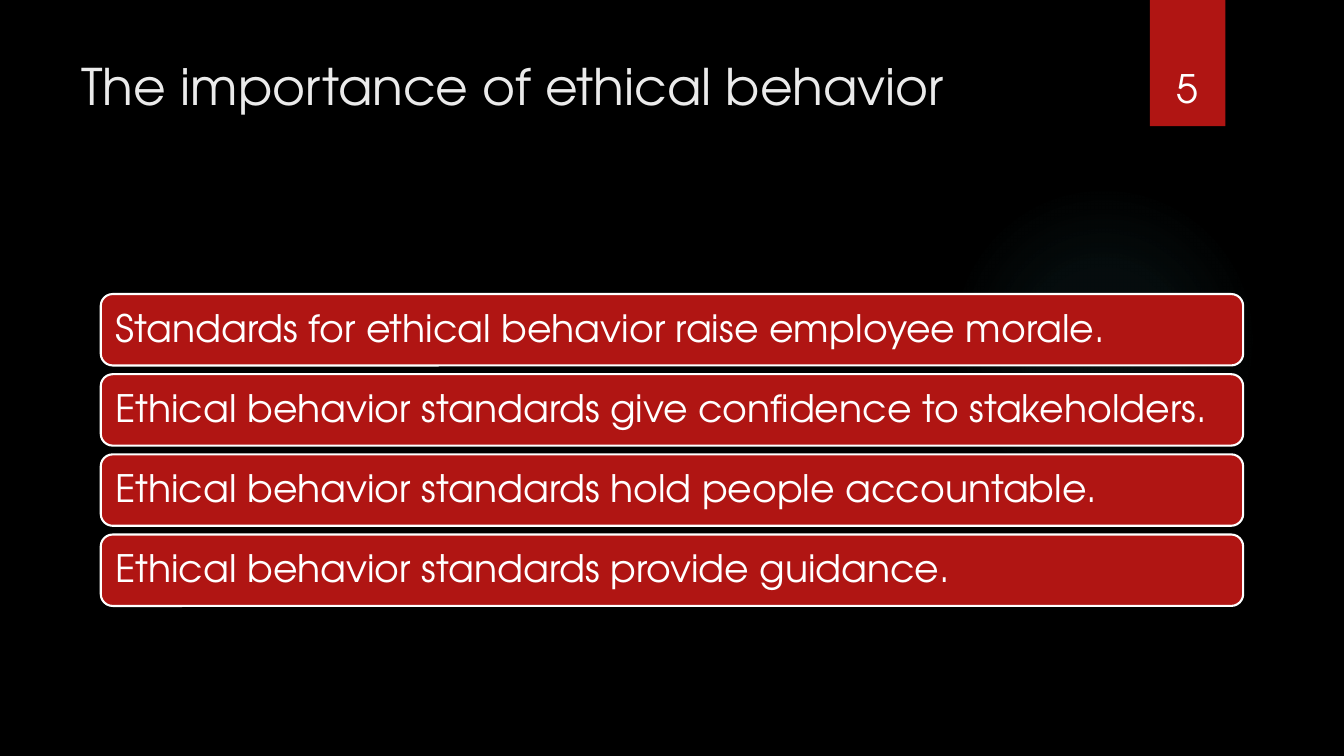
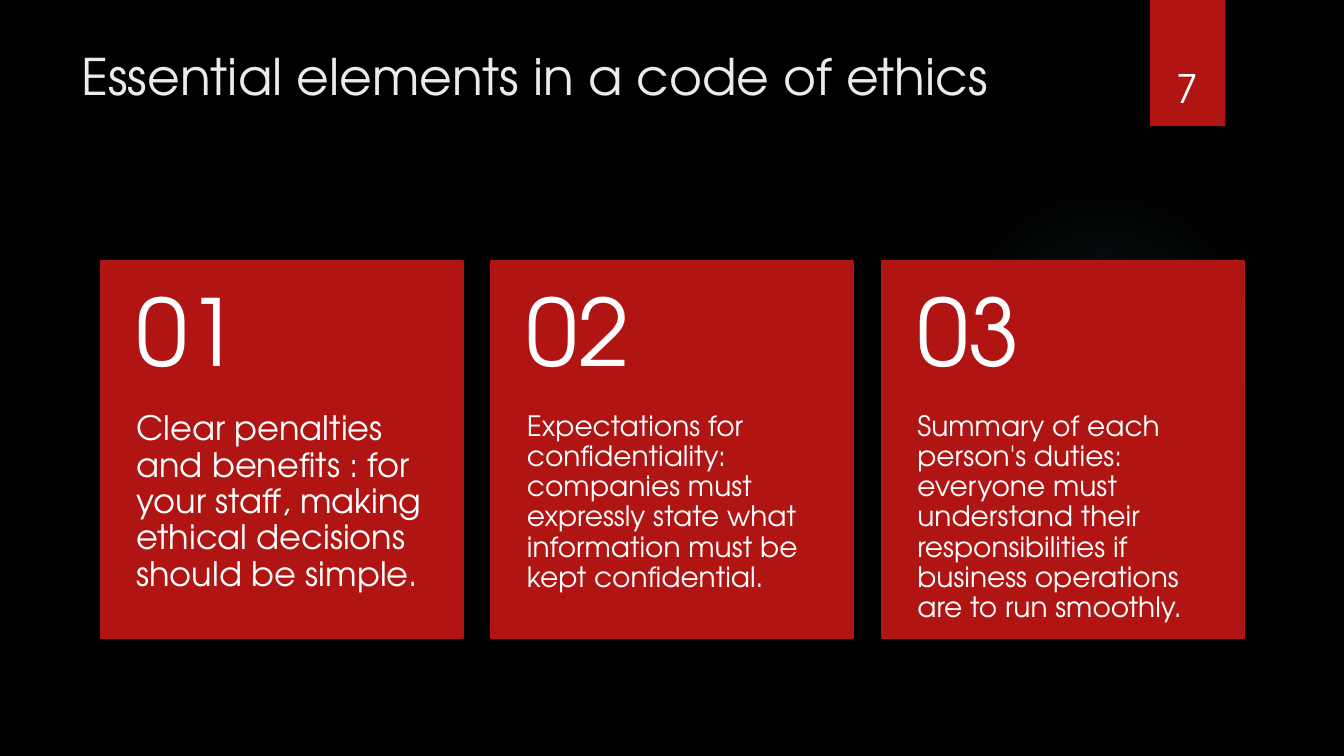
from dataclasses import dataclass

import pptx
import pptx.dml.color
import pptx.enum.shapes
import pptx.enum.text
import pptx.oxml
import pptx.oxml.ns
import pptx.presentation
import pptx.shapes.autoshape
import pptx.slide
import pptx.util

Cm = pptx.util.Cm
Pt = pptx.util.Pt
RGB = pptx.dml.color.RGBColor
Kind = pptx.enum.shapes.MSO_SHAPE
Anchor = pptx.enum.text.MSO_ANCHOR
Align = pptx.enum.text.PP_ALIGN
Shape = pptx.shapes.autoshape.Shape
Slide = pptx.slide.Slide


@dataclass(frozen=True)
class Theme:
    font: str = "TeX Gyre Adventor"
    back: RGB = RGB(0x00, 0x00, 0x00)
    red: RGB = RGB(0xB0, 0x15, 0x13)
    white: RGB = RGB(0xFF, 0xFF, 0xFF)
    pale: RGB = RGB(0xEB, 0xEB, 0xEB)
    glow: str = "50B9C1"
    title: int = 36
    page: int = 28
    bar: int = 27
    digit: int = 66
    line: float = 1.5


@dataclass(frozen=True)
class Box:
    """A frame in centimetres."""
    left: float
    top: float
    width: float
    height: float


@dataclass(frozen=True)
class Inset:
    """Text margins in centimetres."""
    left: float = 0.25
    top: float = 0.13
    right: float = 0.25
    bottom: float = 0.13


@dataclass(frozen=True)
class Card:
    digit: str
    text: str
    size: int


THEME = Theme()
PAD = Inset()

BARS = (
    "Standards for ethical behavior raise employee morale.",
    "Ethical behavior standards give confidence to stakeholders.",
    "Ethical behavior standards hold people accountable.",
    "Ethical behavior standards provide guidance.",
)
CARDS = (
    Card("01", "Clear penalties and benefits : for your staff, making "
               "ethical decisions should be simple.", 24),
    Card("02", "Expectations for confidentiality: companies must expressly "
               "state what information must be kept confidential.", 20),
    Card("03", "Summary of each person's duties: everyone must understand "
               "their responsibilities if business operations are to run "
               "smoothly.", 20),
)


def write(shape: Shape, text: str, size: int, color: RGB = THEME.white,
          inset: Inset = PAD, anchor: Anchor = Anchor.TOP,
          align: Align = Align.LEFT, space: float = 1.0) -> None:
    frame = shape.text_frame
    frame.word_wrap = True
    frame.vertical_anchor = anchor
    frame.margin_left, frame.margin_top = Cm(inset.left), Cm(inset.top)
    frame.margin_right, frame.margin_bottom = Cm(inset.right), Cm(inset.bottom)
    para = frame.paragraphs[0]
    para.text = text
    para.alignment = align
    para.line_spacing = space
    para.font.name = THEME.font
    para.font.size = Pt(size)
    para.font.color.rgb = color


def label(slide: Slide, box: Box) -> Shape:
    """Add an empty text box."""
    return slide.shapes.add_textbox(
        Cm(box.left), Cm(box.top), Cm(box.width), Cm(box.height))


def block(slide: Slide, kind: Kind, box: Box, edge: RGB | None = None) -> Shape:
    """Add a red shape, outlined only if an edge colour is given."""
    shape = slide.shapes.add_shape(
        kind, Cm(box.left), Cm(box.top), Cm(box.width), Cm(box.height))
    shape.shadow.inherit = False
    shape.fill.solid()
    shape.fill.fore_color.rgb = THEME.red
    if edge is None:
        shape.line.fill.background()
    else:
        shape.line.color.rgb = edge
        shape.line.width = Pt(THEME.line)
    return shape


def glow(slide: Slide) -> None:
    """Add the faint round light, which fades out towards its rim."""
    shape = block(slide, Kind.OVAL, Box(23.9, 4.65, 7.82, 7.82))
    stops = "".join(
        f'<a:gs pos="{pos * 1000}"><a:srgbClr val="{THEME.glow}">'
        f'<a:alpha val="{alpha * 1000}"/></a:srgbClr></a:gs>'
        for pos, alpha in ((0, 7), (36, 6), (69, 0), (100, 0)))
    grad = pptx.oxml.parse_xml(
        f'<a:gradFill {pptx.oxml.ns.nsdecls("a")} rotWithShape="1">'
        f'<a:gsLst>{stops}</a:gsLst><a:path path="circle">'
        '<a:fillToRect l="50000" t="50000" r="50000" b="50000"/>'
        '</a:path></a:gradFill>')
    props = shape.element.spPr
    props.replace(props.find(pptx.oxml.ns.qn("a:solidFill")), grad)


def start(deck: pptx.presentation.Presentation, title: str, page: str,
          top: float) -> Slide:
    """Add a slide with the shared glow, ribbon, page number and title."""
    slide = deck.slides.add_slide(deck.slide_layouts[6])
    glow(slide)
    block(slide, Kind.RECTANGLE, Box(28.98, 0, 1.9, 3.18))
    write(label(slide, Box(28.75, 0.81, 2.34, 2.13)), page, THEME.page,
          anchor=Anchor.BOTTOM, align=Align.CENTER)
    write(label(slide, Box(1.8, top, 26.14, 3.89)), title, THEME.title,
          THEME.pale)
    return slide


def stack(slide: Slide) -> None:
    """Draw the statements as rounded bars, one below the other."""
    pad = Inset(0.28, 0.28, 0.28, 0.28)
    for i, text in enumerate(BARS):
        box = Box(2.54, 7.41 + i * 2.02, 28.79, 1.8)
        bar = block(slide, Kind.ROUNDED_RECTANGLE, box, THEME.white)
        write(bar, text, THEME.bar, inset=pad, anchor=Anchor.MIDDLE, space=0.9)


def row(slide: Slide) -> None:
    """Draw the numbered cards side by side."""
    width, head = 9.12, 3.81
    for i, card in enumerate(CARDS):
        left, top = 2.54 + i * 9.84, 6.57
        panel = block(slide, Kind.RECTANGLE, Box(left, top, width, 9.5),
                      THEME.red)
        write(panel, card.text, card.size,
              inset=Inset(0.9, head, 0.9, 0.25), space=0.9)
        write(label(slide, Box(left, top, width, head)), card.digit,
              THEME.digit, inset=Inset(0.9, 0.45, 0.9, 0.45),
              anchor=Anchor.MIDDLE, space=0.9)


def main() -> None:
    deck = pptx.Presentation()
    deck.slide_width, deck.slide_height = Cm(33.87), Cm(19.05)
    back = deck.slide_master.background.fill
    back.solid()
    back.fore_color.rgb = THEME.back
    stack(start(deck, "The importance of ethical behavior", "5", 1.27))
    row(start(deck, "Essential elements in a code of ethics", "7", 1.02))
    deck.save("out.pptx")


if __name__ == "__main__":
    main()
